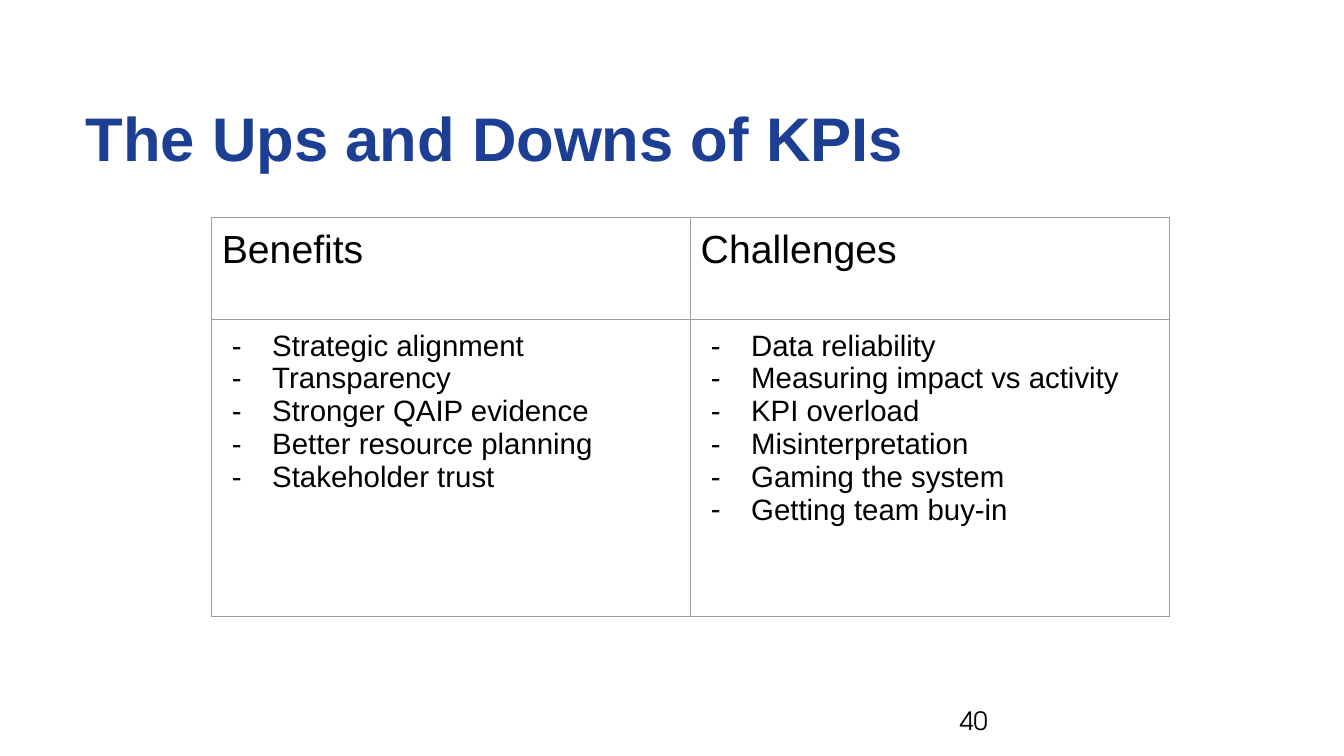
from lxml import etree
from pptx import Presentation
from pptx.dml.color import RGBColor
from pptx.enum.text import MSO_ANCHOR, MSO_AUTO_SIZE, PP_ALIGN
from pptx.oxml.ns import qn
from pptx.util import Inches, Pt

MIDDLE = MSO_ANCHOR.MIDDLE
NO_AUTOFIT = MSO_AUTO_SIZE.NONE
LEFT = PP_ALIGN.LEFT
TITLE_ONLY = 5

COLORS = {"title": "1C3F94", "text": "000000", "border": "9E9E9E"}
BODY_FONT = "Arial"
NUMBER_FONT = "TeX Gyre Adventor"

COLUMNS = {
    "Benefits": [
        "Strategic alignment",
        "Transparency",
        "Stronger QAIP evidence",
        "Better resource planning",
        "Stakeholder trust",
    ],
    "Challenges": [
        "Data reliability",
        "Measuring impact vs activity",
        "KPI overload",
        "Misinterpretation",
        "Gaming the system",
        "Getting team buy-in",
    ],
}
COLUMN_WIDTH = 4.75
ROW_HEIGHTS = [1.01, 2.95]


def style_paragraph(para, size, color="text", name=BODY_FONT, bold=False):
    para.alignment = LEFT
    para.font.size = Pt(size)
    para.font.name = name
    para.font.bold = bold
    para.font.color.rgb = RGBColor.from_string(COLORS[color])


def add_dash(para):
    """Give the paragraph a hanging dash bullet."""
    properties = para._p.get_or_add_pPr()
    properties.set("marL", str(Inches(0.5)))
    properties.set("indent", str(Inches(-0.4)))
    bullet_color = etree.SubElement(properties, qn("a:buClr"))
    etree.SubElement(bullet_color, qn("a:srgbClr"), val=COLORS["text"])
    etree.SubElement(properties, qn("a:buFont"), typeface=BODY_FONT)
    etree.SubElement(properties, qn("a:buChar"), char="-")


def set_borders(cell):
    properties = cell._tc.get_or_add_tcPr()
    for index, side in enumerate(["lnL", "lnR", "lnT", "lnB"]):
        line = etree.Element(qn(f"a:{side}"), w=str(Pt(0.75)))
        fill = etree.SubElement(line, qn("a:solidFill"))
        etree.SubElement(fill, qn("a:srgbClr"), val=COLORS["border"])
        properties.insert(index, line)


def fill_cell(cell, lines, size, dashed=False):
    cell.fill.background()
    set_borders(cell)
    cell.margin_left = cell.margin_right = Inches(0.1)
    cell.margin_top = cell.margin_bottom = Inches(0.1)
    cell.text = "\n".join(lines)
    for para in cell.text_frame.paragraphs:
        if dashed:
            add_dash(para)
        style_paragraph(para, size)


def set_title(page, text):
    title = page.shapes.title
    title.left, title.top = Inches(0.75), Inches(0.59)
    title.width, title.height = Inches(10.22), Inches(1.67)
    frame = title.text_frame
    frame.text = text
    frame.auto_size = NO_AUTOFIT
    frame.vertical_anchor = MIDDLE
    para = frame.paragraphs[0]
    para.line_spacing = 0.8
    style_paragraph(para, 44, "title", bold=True)


def add_page_number(page, number):
    box = page.shapes.add_textbox(Inches(9.42), Inches(6.95), Inches(3), Inches(0.4))
    frame = box.text_frame
    frame.word_wrap = True
    frame.vertical_anchor = MIDDLE
    frame.text = number
    style_paragraph(frame.paragraphs[0], 18, name=NUMBER_FONT)


def add_comparison(page, columns):
    frame = page.shapes.add_table(
        len(ROW_HEIGHTS), len(columns), Inches(2.1), Inches(2.16),
        Inches(COLUMN_WIDTH * len(columns)), Inches(sum(ROW_HEIGHTS)))
    table = frame.table
    table.first_row = table.horz_banding = False
    for row, height in zip(table.rows, ROW_HEIGHTS):
        row.height = Inches(height)
    for index, (heading, points) in enumerate(columns.items()):
        table.columns[index].width = Inches(COLUMN_WIDTH)
        fill_cell(table.cell(0, index), [heading], 28)
        fill_cell(table.cell(1, index), points, 21, dashed=True)


def main():
    deck = Presentation()
    deck.slide_width, deck.slide_height = Inches(13.33), Inches(7.5)
    page = deck.slides.add_slide(deck.slide_layouts[TITLE_ONLY])
    set_title(page, "The Ups and Downs of KPIs")
    add_page_number(page, "40")
    add_comparison(page, COLUMNS)
    deck.save("out.pptx")


if __name__ == "__main__":
    main()
